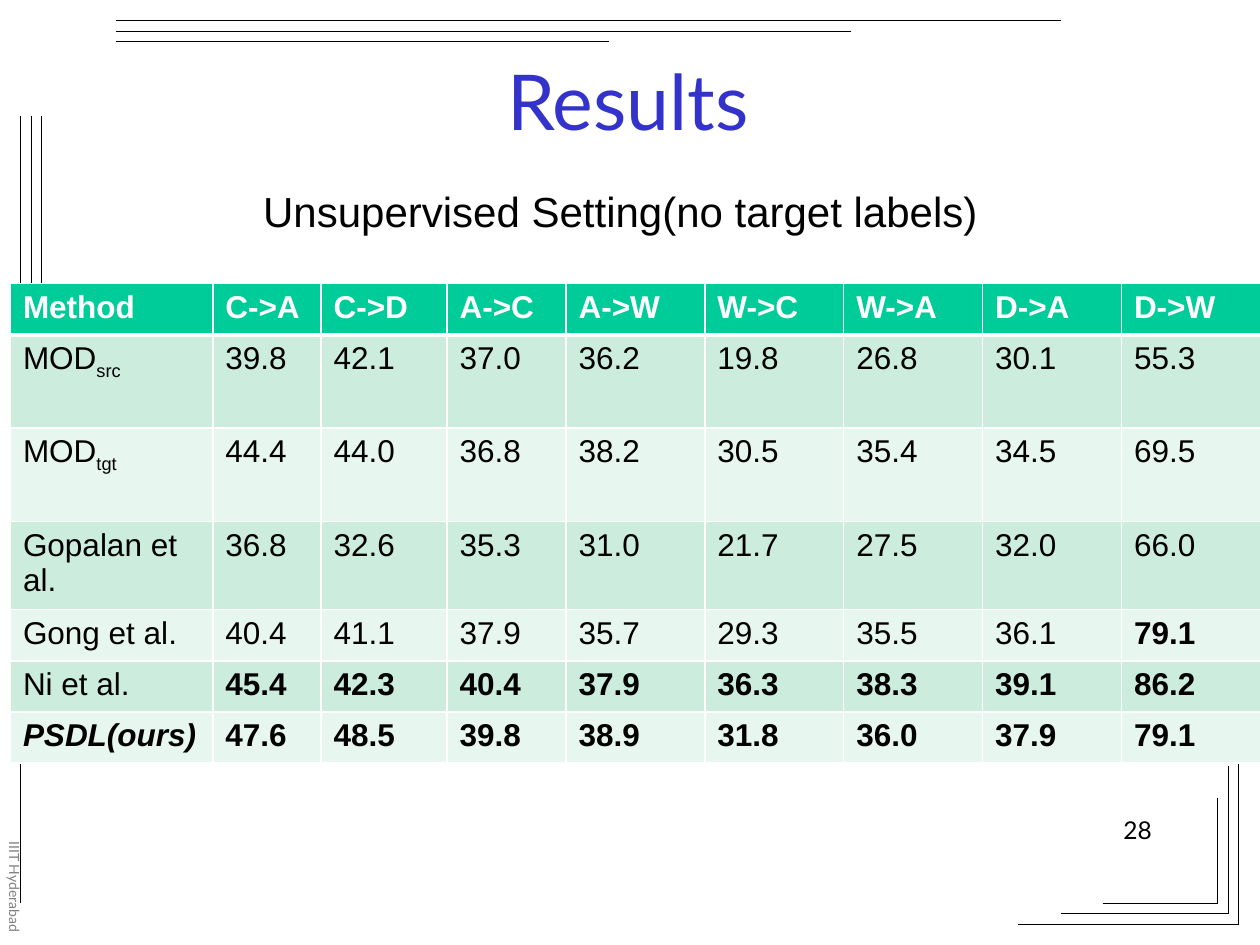
from dataclasses import dataclass
from typing import NamedTuple

from lxml.etree import SubElement
from pptx import Presentation
from pptx.dml.color import RGBColor
from pptx.enum.shapes import MSO_CONNECTOR
from pptx.enum.text import MSO_ANCHOR, MSO_AUTO_SIZE, PP_ALIGN
from pptx.oxml.ns import qn
from pptx.util import Cm, Pt


@dataclass(frozen=True)
class Theme:
    """Colours, fonts and type sizes of the slide."""

    black: str = "000000"
    white: str = "FFFFFF"
    grey: str = "808080"
    title: str = "3333CC"
    header: str = "00CC99"
    bands: tuple = ("CCECDE", "E7F6EF")
    heading_font: str = "Lato"
    body_font: str = "Arial"
    title_size: int = 44
    subtitle_size: int = 24
    table_size: int = 18
    number_size: int = 14
    label_size: int = 8


class Rule(NamedTuple):
    """A decorative line, in centimetres."""

    x1: float
    y1: float
    x2: float
    y2: float


class Place(NamedTuple):
    """The position and size of a box, in centimetres."""

    left: float
    top: float
    width: float
    height: float


class Result(NamedTuple):
    """One method with its accuracies and row height."""

    method: str
    subscript: str
    height: float
    values: str
    bold_from: int = 9
    ours: bool = False


THEME = Theme()
STEP = 0.21
COLUMN_WIDTHS = [4.08, 2.18, 2.54, 2.4] + [2.8] * 5
HEADER = "Method C->A C->D A->C A->W W->C W->A D->A D->W".split()
HEADER_HEIGHT = 1.03
RESULTS = [
    Result("MOD", "src", 1.88, "39.8 42.1 37.0 36.2 19.8 26.8 30.1 55.3"),
    Result("MOD", "tgt", 1.88, "44.4 44.0 36.8 38.2 30.5 35.4 34.5 69.5"),
    Result("Gopalan et al.", "", 1.78, "36.8 32.6 35.3 31.0 21.7 27.5 32.0 66.0"),
    Result("Gong et al.", "", 1.03, "40.4 41.1 37.9 35.7 29.3 35.5 36.1 79.1", 8),
    Result("Ni et al.", "", 1.03, "45.4 42.3 40.4 37.9 36.3 38.3 39.1 86.2", 1),
    Result("PSDL(ours)", "", 1.03, "47.6 48.5 39.8 38.9 31.8 36.0 37.9 79.1", 0, True),
]


def frame_rules() -> list[Rule]:
    """Return the three nested lines of each slide edge and corner."""
    rules = []
    ends = zip((21.39, 17.15, 12.27), (18.21, 14.4, 10.36),
               (20.52, 21.39, 22.23), (14.81, 15.44, 16.08))
    for index, (top_end, left_end, corner_x, corner_y) in enumerate(ends):
        near = 0.42 + index * STEP
        right, bottom = 24.97 - index * STEP, 18.63 - index * STEP
        rules += [
            Rule(2.33, near, top_end, near),
            Rule(near, 2.33, near, left_end),
            Rule(corner_x, bottom, right, bottom),
            Rule(right, corner_y, right, bottom),
        ]
    return rules


def draw_rule(page, rule: Rule) -> None:
    """Draw one thin line without a shadow."""
    line = page.shapes.add_connector(MSO_CONNECTOR.STRAIGHT, *map(Cm, rule))
    line.line.color.rgb = RGBColor.from_string(THEME.black)
    line.line.width = Pt(0.75)
    SubElement(line._element.spPr, qn("a:effectLst"))


def style(para, size: int, color: str, font: str = THEME.body_font,
          bold: bool = False, italic: bool = False) -> None:
    """Set the font of a whole paragraph."""
    para.font.size = Pt(size)
    para.font.name = font
    para.font.bold = bold
    para.font.italic = italic
    para.font.color.rgb = RGBColor.from_string(color)


def fill_placeholder(box, place: Place, text: str, anchor: MSO_ANCHOR):
    """Move a placeholder, write one centred line and return its paragraph."""
    box.left, box.top, box.width, box.height = map(Cm, place)
    frame = box.text_frame
    frame.text = text
    frame.auto_size = MSO_AUTO_SIZE.NONE
    frame.vertical_anchor = anchor
    para = frame.paragraphs[0]
    para.alignment = PP_ALIGN.CENTER
    para.space_before = Pt(0)
    return para


def add_label(page, place: Place, text: str, size: int, color: str):
    """Add a wrapped text box with one line and return it."""
    box = page.shapes.add_textbox(*map(Cm, place))
    box.text_frame.word_wrap = True
    box.text_frame.text = text
    style(box.text_frame.paragraphs[0], size, color, THEME.heading_font)
    return box


def paint_cell(cell, fill: str, bottom_width: float = 1) -> None:
    """Give a cell white borders and a solid fill."""
    properties = cell._tc.get_or_add_tcPr()
    for side, width in (("L", 1), ("R", 1), ("T", 1), ("B", bottom_width)):
        border = SubElement(properties, qn(f"a:ln{side}"), w=str(Pt(width)))
        solid = SubElement(border, qn("a:solidFill"))
        SubElement(solid, qn("a:srgbClr"), val=THEME.white)
    cell.fill.solid()
    cell.fill.fore_color.rgb = RGBColor.from_string(fill)


def add_results(page) -> None:
    """Add the table of accuracies."""
    heights = [HEADER_HEIGHT] + [result.height for result in RESULTS]
    table = page.shapes.add_table(
        len(heights), len(HEADER), Cm(0.21), Cm(5.72),
        Cm(sum(COLUMN_WIDTHS)), Cm(sum(heights))).table
    for column, width in zip(table.columns, COLUMN_WIDTHS):
        column.width = Cm(width)
    for row, height in zip(table.rows, heights):
        row.height = Cm(height)
    for cell, text in zip(table.rows[0].cells, HEADER):
        cell.text = text
        style(cell.text_frame.paragraphs[0], THEME.table_size, THEME.white, bold=True)
        paint_cell(cell, THEME.header, 3)
    for index, result in enumerate(RESULTS):
        texts = [result.method] + result.values.split()
        for column, text in enumerate(texts):
            cell = table.cell(index + 1, column)
            cell.text = text
            para = cell.text_frame.paragraphs[0]
            if column == 0 and result.subscript:
                span = para.add_run()
                span.text = result.subscript
                span._r.get_or_add_rPr().set("baseline", "-25000")
            style(para, THEME.table_size, THEME.black,
                  bold=column >= result.bold_from,
                  italic=result.ours and column == 0)
            paint_cell(cell, THEME.bands[index % 2])


def main() -> None:
    """Build and save the slide."""
    deck = Presentation()
    deck.slide_width, deck.slide_height = Cm(25.4), Cm(19.05)
    page = deck.slides.add_slide(deck.slide_layouts[1])
    for rule in frame_rules():
        draw_rule(page, rule)

    title = fill_placeholder(page.shapes.title, Place(1.88, 0.43, 21.56, 3.15),
                             "Results", MSO_ANCHOR.MIDDLE)
    style(title, THEME.title_size, THEME.title, THEME.heading_font)

    subtitle = fill_placeholder(page.placeholders[1], Place(1.24, 3.61, 22.53, 3.18),
                                "Unsupervised Setting(no target labels)", MSO_ANCHOR.TOP)
    properties = subtitle._p.get_or_add_pPr()
    properties.set("marL", "0")
    properties.set("indent", "0")
    SubElement(properties, qn("a:buNone"))
    style(subtitle, THEME.subtitle_size, THEME.black)

    institute = add_label(page, Place(-0.25, 16.71, 0.84, 2.34), "IIIT Hyderabad",
                          THEME.label_size, THEME.grey)
    institute.text_frame._txBody.bodyPr.set("vert", "eaVert")
    number = add_label(page, Place(18.21, 16.31, 5.26, 1.24), "28",
                       THEME.number_size, THEME.black)
    number.text_frame.paragraphs[0].alignment = PP_ALIGN.RIGHT
    add_results(page)
    deck.save("out.pptx")


if __name__ == "__main__":
    main()
